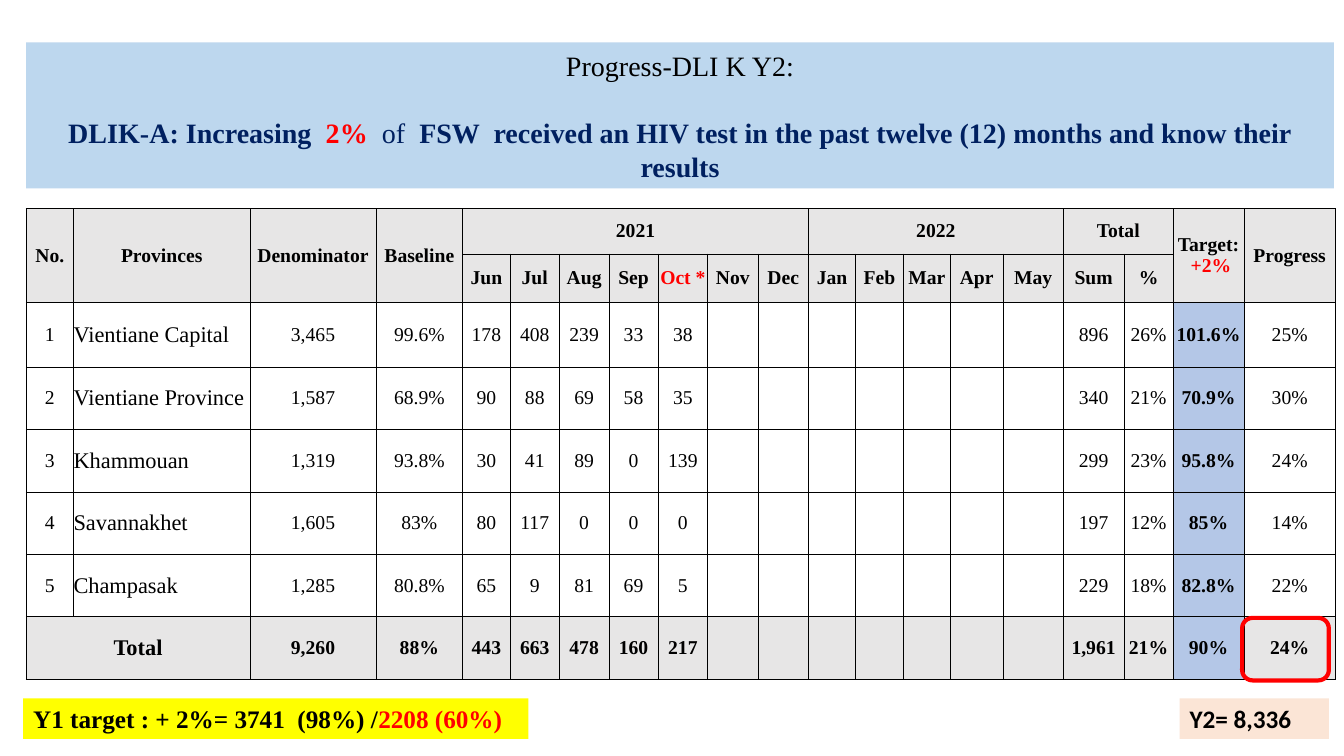
from lxml.etree import SubElement
from pptx import Presentation
from pptx.dml.color import RGBColor
from pptx.enum.shapes import MSO_SHAPE as Preset
from pptx.enum.text import MSO_ANCHOR as Anchor, PP_ALIGN as Align
from pptx.oxml.ns import qn
from pptx.util import Inches, Pt

COLORS = {
    "black": "000000",
    "red": "FF0000",
    "navy": "002060",
    "banner": "BDD7EE",
    "header": "E7E6E6",
    "target": "B4C7E7",
    "yellow": "FFFF00",
    "peach": "FBE5D6",
}
SERIF = "Times New Roman"

COLUMN_WIDTHS = [0.47, 1.75, 1.25, 0.86, 0.47, 0.49, 0.49, 0.49, 0.49, 0.5, 0.5,
                 0.47, 0.47, 0.47, 0.52, 0.6, 0.6, 0.49, 0.7, 0.91]
ROW_HEIGHTS = [0.45, 0.48, 0.64] + [0.62] * 5
MONTHS = ["Jun", "Jul", "Aug", "Sep", "Oct *", "Nov", "Dec",
          "Jan", "Feb", "Mar", "Apr", "May"]
FIRST_MONTH = 4
NAME_COLUMN = 1
TARGET_COLUMN = 18
UNREPORTED = [""] * 7
HEADER_ROWS = 2

TOP_HEADINGS = {0: "No.", 1: "Provinces", 2: "Denominator", 3: "Baseline",
                4: "2021", 11: "2022", 16: "Total", 18: "Target:", 19: "Progress"}
MERGES = [(0, column, 1, column) for column in (0, 1, 2, 3, 18, 19)]
MERGES += [(0, 4, 0, 10), (0, 11, 0, 15), (0, 16, 0, 17), (7, 0, 7, 1)]

RESULTS = [
    (["1", "Vientiane Capital", "3,465", "99.6%", "178", "408", "239", "33", "38"],
     ["896", "26%", "101.6%", "25%"]),
    (["2", "Vientiane Province", "1,587", "68.9%", "90", "88", "69", "58", "35"],
     ["340", "21%", "70.9%", "30%"]),
    (["3", "Khammouan", "1,319", "93.8%", "30", "41", "89", "0", "139"],
     ["299", "23%", "95.8%", "24%"]),
    (["4", "Savannakhet", "1,605", "83%", "80", "117", "0", "0", "0"],
     ["197", "12%", "85%", "14%"]),
    (["5", "Champasak", "1,285", "80.8%", "65", "9", "81", "69", "5"],
     ["229", "18%", "82.8%", "22%"]),
    (["Total", "", "9,260", "88%", "443", "663", "478", "160", "217"],
     ["1,961", "21%", "90%", "24%"]),
]


def rgb(name):
    return RGBColor.from_string(COLORS[name])


def add_span(para, text, size, color="black", bold=False, font=SERIF):
    span = para.add_run()
    span.text = text
    span.font.name = font
    span.font.size = Pt(size)
    span.font.bold = bold
    span.font.color.rgb = rgb(color)


def add_panel(page, preset, left, top, width, height, fill=None, line=None):
    panel = page.shapes.add_shape(preset, Inches(left), Inches(top),
                                  Inches(width), Inches(height))
    panel.shadow.inherit = False
    if fill:
        panel.fill.solid()
        panel.fill.fore_color.rgb = rgb(fill)
    else:
        panel.fill.background()
    if line:
        panel.line.color.rgb = rgb(line)
        panel.line.width = Pt(3)
    else:
        panel.line.fill.background()
    panel.text_frame.word_wrap = True
    return panel


def add_title(page):
    frame = add_panel(page, Preset.RECTANGLE, 0.26, 0.42, 12.97, 1.45, "banner").text_frame
    frame.vertical_anchor = Anchor.MIDDLE
    heading = frame.paragraphs[0]
    add_span(heading, "Progress-DLI K Y2:", 20)
    indicator = frame.add_paragraph()
    indicator.space_before = Pt(24)
    add_span(indicator, "DLIK-A: Increasing  ", 20, "navy", True)
    add_span(indicator, "2%  ", 20, "red", True)
    add_span(indicator, "of  ", 20, "navy")
    add_span(indicator, "FSW  received an HIV test in the past twelve (12) months "
             "and know their results", 20, "navy", True)
    for para in frame.paragraphs:
        para.alignment = Align.CENTER


def add_note(page, left, width, fill, spans, font):
    frame = add_panel(page, Preset.RECTANGLE, left, 6.93, width, 0.4, fill).text_frame
    frame.vertical_anchor = Anchor.TOP
    para = frame.paragraphs[0]
    para.alignment = Align.LEFT
    for text, color in spans:
        add_span(para, text, 18, color, True, font)


def add_borders(cell):
    properties = cell._tc.get_or_add_tcPr()
    for side in ("a:lnL", "a:lnR", "a:lnT", "a:lnB"):
        edge = SubElement(properties, qn(side), w=str(Pt(0.5)))
        solid = SubElement(edge, qn("a:solidFill"))
        SubElement(solid, qn("a:srgbClr"), val=COLORS["black"])


def table_rows():
    top = [TOP_HEADINGS.get(column, "") for column in range(len(COLUMN_WIDTHS))]
    months = [""] * FIRST_MONTH + MONTHS + ["Sum", "%", "", ""]
    return [top, months] + [start + UNREPORTED + end for start, end in RESULTS]


def format_cell(cell, row, column, text):
    is_header = row < HEADER_ROWS
    is_total = row == len(ROW_HEIGHTS) - 1
    is_target = column == TARGET_COLUMN and not is_header
    is_name = column == NAME_COLUMN and not is_header
    add_borders(cell)
    if is_target or is_header or is_total:
        cell.fill.solid()
        cell.fill.fore_color.rgb = rgb("target" if is_target else "header")
    else:
        cell.fill.background()
    cell.margin_left = cell.margin_right = cell.margin_top = cell.margin_bottom = 0
    cell.vertical_anchor = Anchor.MIDDLE
    para = cell.text_frame.paragraphs[0]
    para.alignment = Align.JUSTIFY if is_name else Align.CENTER
    if text:
        size = 16 if is_name or (is_total and column == 0) else 14
        color = "red" if text == "Oct *" else "black"
        add_span(para, text, size, color, is_header or is_total or is_target)
    if text == "Target:":
        para.add_line_break()
        add_span(para, " +2%", 14, "red", True)


def add_progress_table(page):
    table = page.shapes.add_table(len(ROW_HEIGHTS), len(COLUMN_WIDTHS), Inches(0.26),
                                  Inches(2.07), Inches(12.97), Inches(4.67)).table
    table.first_row = table.horz_banding = False
    for column, width in zip(table.columns, COLUMN_WIDTHS):
        column.width = Inches(width)
    for row, height in zip(table.rows, ROW_HEIGHTS):
        row.height = Inches(height)
    for row, texts in enumerate(table_rows()):
        for column, text in enumerate(texts):
            format_cell(table.cell(row, column), row, column, text)
    for top, left, bottom, right in MERGES:
        table.cell(top, left).merge(table.cell(bottom, right))


def main():
    deck = Presentation()
    deck.slide_width = Inches(13.33)
    deck.slide_height = Inches(7.5)
    page = deck.slides.add_slide(deck.slide_layouts[6])
    add_title(page)
    add_progress_table(page)
    add_panel(page, Preset.ROUNDED_RECTANGLE, 12.32, 6.13, 0.86, 0.62, line="red")
    add_note(page, 0.23, 5.01, "yellow",
             [("Y1 target : + 2%= 3741  (98%) /", "black"), ("2208 (60%)", "red")], SERIF)
    add_note(page, 11.7, 1.48, "peach", [("Y2= 8,336", "black")], "Calibri")
    deck.save("out.pptx")


if __name__ == "__main__":
    main()
